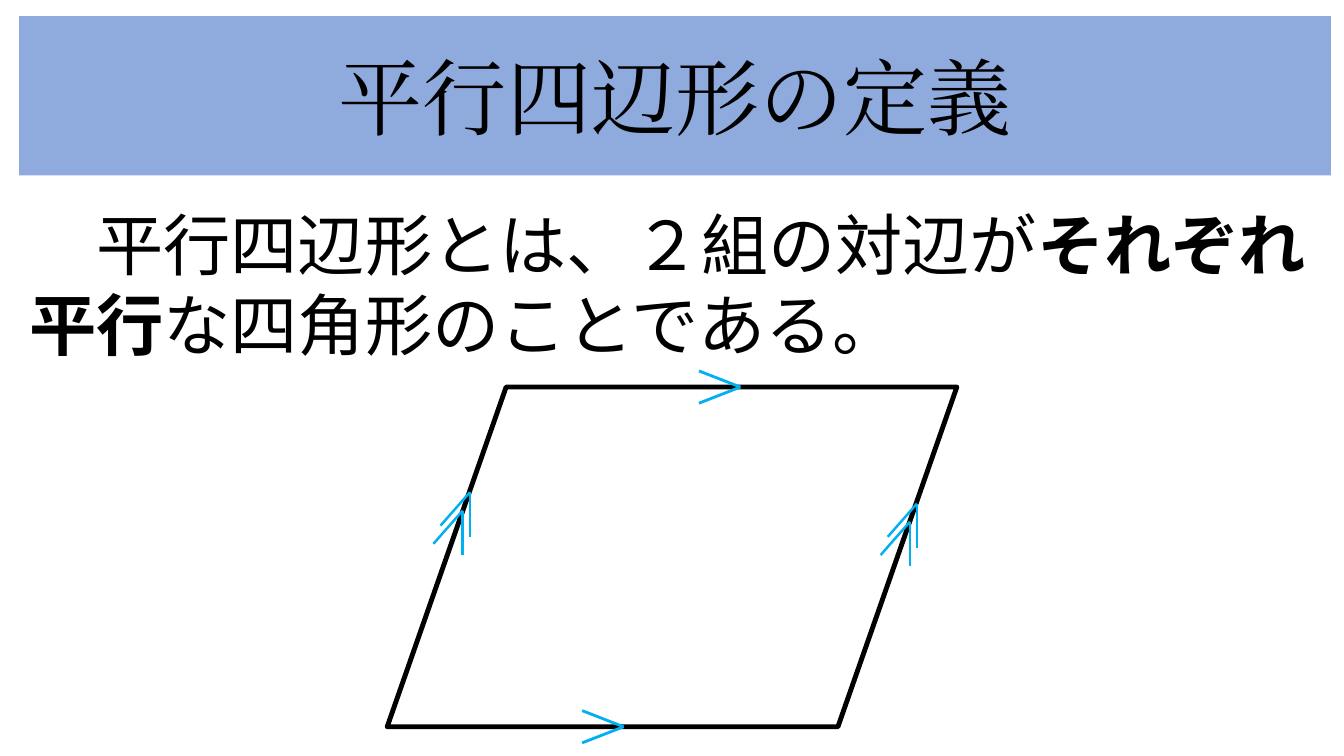
from lxml.etree import SubElement
from pptx import Presentation
from pptx.dml.color import RGBColor
from pptx.enum.shapes import MSO_CONNECTOR, MSO_SHAPE
from pptx.enum.text import MSO_ANCHOR, PP_ALIGN
from pptx.oxml.ns import qn
from pptx.util import Inches, Pt

BLACK = RGBColor(0, 0, 0)
WHITE = RGBColor(255, 255, 255)
BLUE = RGBColor(0x8F, 0xAA, 0xDC)
CYAN = RGBColor(0x00, 0xB0, 0xF0)

TITLE = [("平行四辺形の定義", False)]
BODY = [
    ("　平行四辺形とは、２組の対辺が", False),
    ("それぞれ平行", True),
    ("な四角形のことである。", False),
]

WIDE, HIGH = 13.33, 7.5
EDGE = 0.19
SPAN = 13.01
LEFT, TOP, BASE, RISE = 3.84, 3.84, 5.65, 3.37
SLANT = 0.35

# Tails of each arrow mark, measured from its tip
FLAT = [(-0.41, -0.16), (-0.41, 0.16)]
STEEP = [(-0.29, 0.33), (0, 0.44)]
STEP = (-0.07, 0.18)

# Tip as shares of the parallelogram's frame, tails, marks, line width
MARKS = [
    (0.62, 0, FLAT, 1, 2),
    (0.415, 1, FLAT, 1, 2),
    (0.145, 0.31, STEEP, 2, 1.75),
    (0.93, 0.343, STEEP, 2, 1.75),
]


def box(shapes, kind, x, y, w, h, fill):
    shape = shapes.add_shape(kind, Inches(x), Inches(y), Inches(w), Inches(h))
    shape.shadow.inherit = False
    shape.fill.solid()
    shape.fill.fore_color.rgb = fill
    shape.line.fill.background()
    return shape


def write(shape, runs, font, size, align=PP_ALIGN.LEFT, wrap=True, pitch=None):
    frame = shape.text_frame
    frame.word_wrap = wrap
    frame.vertical_anchor = MSO_ANCHOR.MIDDLE
    para = frame.paragraphs[0]
    para.alignment = align
    if pitch:
        para.line_spacing = Pt(pitch)
    for text, bold in runs:
        run = para.add_run()
        run.text = text
        run.font.name = font
        run.font.size = Pt(size)
        run.font.bold = bold
        run.font.color.rgb = BLACK
        SubElement(run.font._element, qn("a:ea")).set("typeface", font)


def mark(shapes, x, y, tails, width):
    """Draw one open arrow mark with its tip at x, y."""
    group = shapes.add_group_shape()
    for dx, dy in tails:
        line = group.shapes.add_connector(
            MSO_CONNECTOR.STRAIGHT,
            Inches(x + dx), Inches(y + dy), Inches(x), Inches(y))
        line.line.color.rgb = CYAN
        line.line.width = Pt(width)
        SubElement(line._element.spPr, qn("a:effectLst"))


def main():
    deck = Presentation()
    deck.slide_width, deck.slide_height = Inches(WIDE), Inches(HIGH)
    shapes = deck.slides.add_slide(deck.slide_layouts[6]).shapes

    band = box(shapes, MSO_SHAPE.RECTANGLE, EDGE, 0.16, SPAN, 1.58, BLUE)
    write(band, TITLE, "Cambria", 60, align=PP_ALIGN.CENTER, wrap=False)

    body = shapes.add_textbox(
        Inches(EDGE), Inches(1.9), Inches(SPAN), Inches(1.72))
    body.text_frame.margin_top = Inches(0.12)
    body.text_frame.margin_bottom = 0
    write(body, BODY, "Noto Sans CJK JP", 48, pitch=57)

    figure = box(shapes, MSO_SHAPE.PARALLELOGRAM, LEFT, TOP, BASE, RISE, WHITE)
    figure.adjustments[0] = SLANT
    figure.line.color.rgb = BLACK
    figure.line.width = Pt(3.5)

    for across, down, tails, count, width in MARKS:
        for i in range(count):
            mark(shapes, LEFT + across * BASE + i * STEP[0],
                 TOP + down * RISE + i * STEP[1], tails, width)

    deck.save("out.pptx")


if __name__ == "__main__":
    main()
